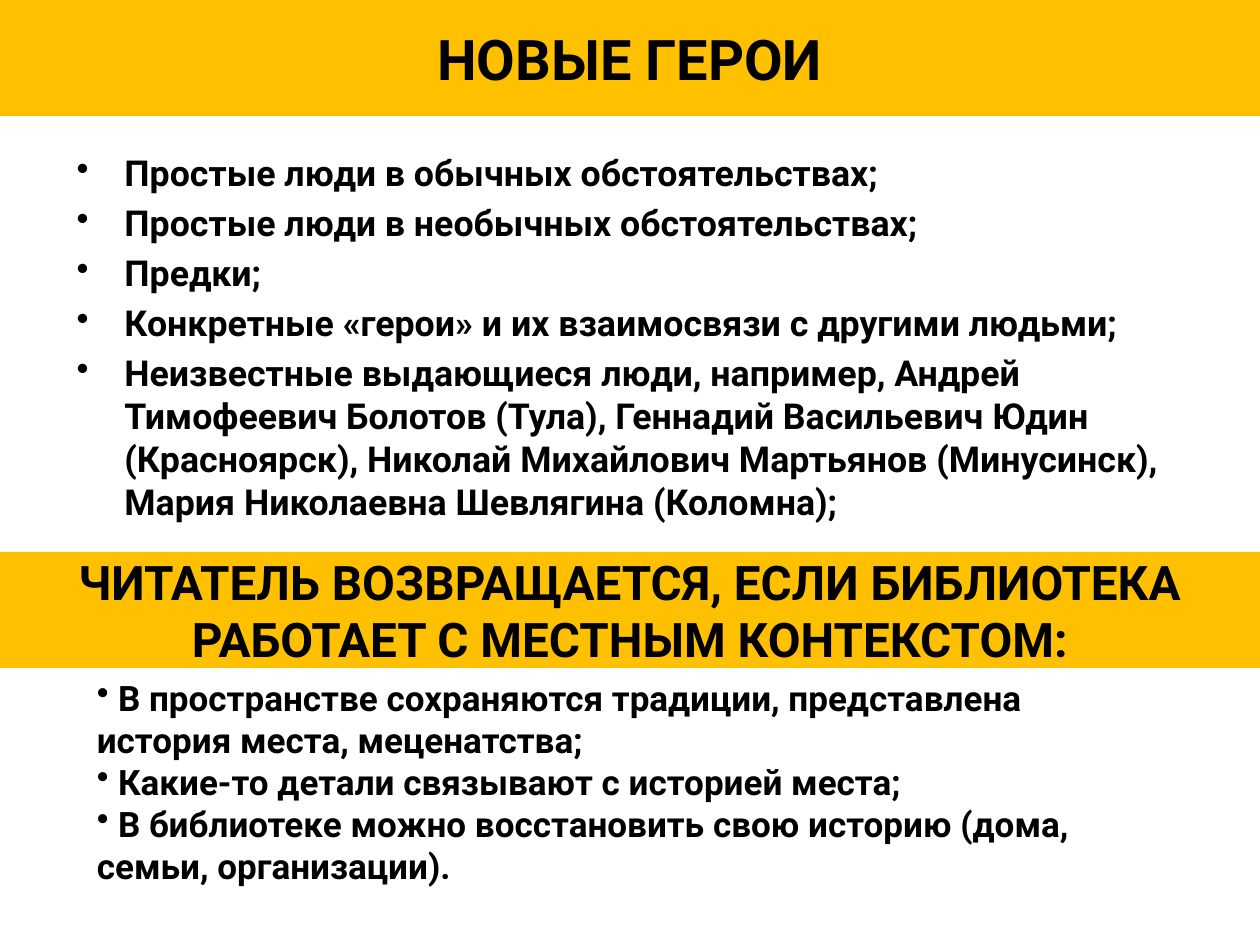
"""Build a slide with two yellow headings, each followed by a bulleted list."""
from lxml import etree
from pptx import Presentation
from pptx.dml.color import RGBColor
from pptx.enum import shapes, text
from pptx.oxml.ns import qn
from pptx.util import Inches, Pt

BLACK, YELLOW = "000000", "FFC000"
HEADINGS = [
    (0, 32, "НОВЫЕ ГЕРОИ"),
    (4.38, 27.2, "ЧИТАТЕЛЬ ВОЗВРАЩАЕТСЯ, ЕСЛИ БИБЛИОТЕКА РАБОТАЕТ С МЕСТНЫМ КОНТЕКСТОМ:"),
]
HEROES = [
    "Простые люди в обычных обстоятельствах;",
    "Простые люди в необычных обстоятельствах;",
    "Предки;",
    "Конкретные «герои» и их взаимосвязи с другими людьми;",
    "Неизвестные выдающиеся люди, например, Андрей Тимофеевич Болотов (Тула), "
    "Геннадий Васильевич Юдин (Красноярск), Николай Михайлович Мартьянов (Минусинск), "
    "Мария Николаевна Шевлягина (Коломна);",
]
CONTEXT = [
    " В пространстве сохраняются традиции, представлена история места, меценатства;",
    " Какие-то детали связывают с историей места;",
    " В библиотеке можно восстановить свою историю (дома, семьи, организации).",
]
LISTS = [
    ((0.51, 1.15, 9, 3.15), 20.4, 0.38, 4.1, HEROES),
    ((0.67, 5.32, 8.58, 2.12), 20, 0, 0, CONTEXT),
]


def color(value):
    return RGBColor.from_string(value)


def style(paragraph, size):
    for span in paragraph.runs:
        span.font.name = "Roboto"
        span.font.size = Pt(size)
        span.font.bold = True
        span.font.color.rgb = color(BLACK)


deck = Presentation()
deck.slide_width, deck.slide_height = Inches(10), Inches(7.5)
page = deck.slides.add_slide(deck.slide_layouts[6])

for top, size, heading in HEADINGS:
    band = page.shapes.add_shape(
        shapes.MSO_SHAPE.RECTANGLE, Inches(0), Inches(top), Inches(10), Inches(0.92)
    )
    band.shadow.inherit = False
    band.fill.solid()
    band.fill.fore_color.rgb = color(YELLOW)
    band.line.fill.background()
    frame = band.text_frame
    frame.word_wrap = True
    frame.vertical_anchor = text.MSO_ANCHOR.MIDDLE
    frame.text = heading
    frame.paragraphs[0].alignment = text.PP_ALIGN.CENTER
    style(frame.paragraphs[0], size)

for place, size, indent, gap, items in LISTS:
    box = page.shapes.add_textbox(*(Inches(length) for length in place))
    frame = box.text_frame
    frame.word_wrap = True
    frame.text = "\n".join(items)
    for paragraph in frame.paragraphs:
        paragraph.space_before = Pt(gap)
        style(paragraph, size)
        properties = paragraph._p.get_or_add_pPr()
        properties.set("marL", str(Inches(indent)))
        properties.set("indent", str(-Inches(indent)))
        etree.SubElement(properties, qn("a:buChar")).set("char", "•")

deck.save("out.pptx")
